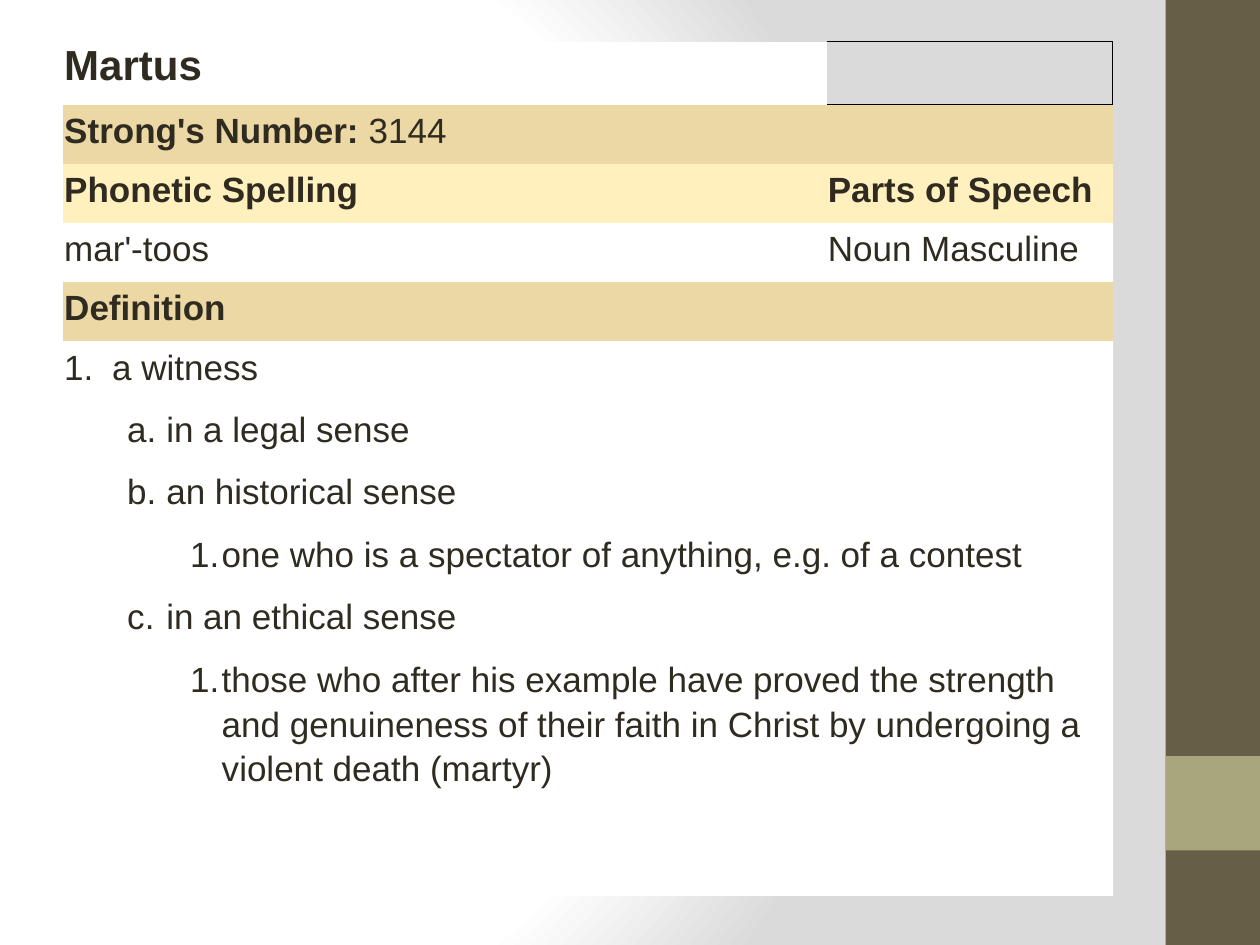
from dataclasses import dataclass

from pptx import Presentation
from pptx.dml.color import RGBColor
from pptx.enum.shapes import MSO_SHAPE
from pptx.oxml import parse_xml
from pptx.oxml.ns import nsdecls
from pptx.util import Inches, Pt

RECT = MSO_SHAPE.RECTANGLE
PLAIN_TABLE = "{2D5ABB26-0587-4C30-8999-92F81FD0307C}"


@dataclass(frozen=True)
class Theme:
    font: str = "Arial"
    title: int = 24
    body: int = 20
    ink: str = "2F2B20"
    white: str = "FFFFFF"
    grey: str = "DADADA"
    tan: str = "ECD8A5"
    cream: str = "FFF0BE"
    brown: str = "675E47"
    olive: str = "A9A57C"
    border: str = "000000"


THEME = Theme()

# List level: left indent, hanging indent, tab stop, numbering
LEVELS = [
    (0.38, 0.38, 0.5, "arabicPeriod"),
    (0.81, 0.31, 1.0, "alphaLcPeriod"),
    (1.25, 0.25, 1.5, "arabicPeriod"),
]

DEFINITION = [
    (0, "a witness"),
    (1, "in a legal sense"),
    (1, "an historical sense"),
    (2, "one who is a spectator of anything, e.g. of a contest"),
    (1, "in an ethical sense"),
    (2, "those who after his example have proved the strength and genuineness "
        "of their faith in Christ by undergoing a violent death (martyr)"),
]

# Row: fill, then one list of (text, bold) runs per cell
ROWS = [
    (THEME.tan, [("Strong's Number:", True), (" 3144", False)], []),
    (THEME.cream, [("Phonetic Spelling", True)], [("Parts of Speech", True)]),
    (THEME.white, [("mar'-toos ", False)], [("Noun Masculine", False)]),
    (THEME.tan, [("Definition", True)], []),
]


class SlideBuilder:
    def __init__(self, slide, theme):
        self.s = slide
        self.theme = theme

    def background(self):
        stops = [(0, self.theme.white), (75, self.theme.white), (100, self.theme.grey)]
        gs = "".join(f'<a:gs pos="{pos * 1000}"><a:srgbClr val="{color}"/></a:gs>'
                     for pos, color in stops)
        bg = parse_xml(
            f'<p:bg {nsdecls("p", "a")}><p:bgPr><a:gradFill rotWithShape="1">'
            f'<a:gsLst>{gs}</a:gsLst><a:path path="circle">'
            '<a:fillToRect l="20000" t="50000" r="100000" b="50000"/></a:path>'
            '</a:gradFill><a:effectLst/></p:bgPr></p:bg>')
        self.s._element.cSld.insert(0, bg)

    def band(self, left, top, width, height, color):
        sp = self.s.shapes.add_shape(
            RECT, Inches(left), Inches(top), Inches(width), Inches(height))
        sp.shadow.inherit = False
        sp.fill.solid()
        sp.fill.fore_color.rgb = RGBColor.from_string(color)
        sp.line.fill.background()

    def table(self, left, top, widths, heights):
        frame = self.s.shapes.add_table(
            len(heights), len(widths), Inches(left), Inches(top),
            Inches(sum(widths)), Inches(sum(heights)))
        table = frame.table
        table.first_row = table.horz_banding = False
        table._tbl.tblPr.find("{*}tableStyleId").text = PLAIN_TABLE
        for column, width in zip(table.columns, widths):
            column.width = Inches(width)
        for row, height in zip(table.rows, heights):
            row.height = Inches(height)
        for cell in table.iter_cells():
            for side in ("left", "right", "top", "bottom"):
                setattr(cell, f"margin_{side}", Inches(0.01))
        return table

    def fill(self, cell, color):
        cell.fill.solid()
        cell.fill.fore_color.rgb = RGBColor.from_string(color)

    def runs(self, p, runs, size=None, spacing=1.15):
        p.line_spacing = spacing
        for text, bold in runs:
            r = p.add_run()
            r.text = text
            r.font.color.rgb = RGBColor.from_string(self.theme.ink)
            style = {"name": self.theme.font, "size": Pt(size or self.theme.body),
                     "bold": bold}
            for name, value in style.items():
                setattr(r.font, name, value)

    def numbered_list(self, cell, items):
        tf = cell.text_frame
        for i, (level, text) in enumerate(items):
            p = tf.add_paragraph() if i else tf.paragraphs[0]
            self.runs(p, [(text, False)])
            p.level = level
            p.space_after = Pt(10)
            left, hanging, tab, numbering = LEVELS[level]
            pPr = p._p.get_or_add_pPr()
            pPr.set("marL", str(Inches(left)))
            pPr.set("indent", str(-Inches(hanging)))
            pPr.append(parse_xml(
                f'<a:buAutoNum {nsdecls("a")} type="{numbering}"/>'))
            pPr.append(parse_xml(
                f'<a:tabLst {nsdecls("a")}><a:tab pos="{Inches(tab)}" algn="l"/></a:tabLst>'))

    def borders(self, cell, sides):
        tcPr = cell._tc.get_or_add_tcPr()
        for i, side in enumerate(sides):
            tcPr.insert(i, parse_xml(
                f'<a:ln{side} {nsdecls("a")} w="{Pt(1)}"><a:solidFill>'
                f'<a:srgbClr val="{self.theme.border}"/></a:solidFill></a:ln{side}>'))


def main():
    prs = Presentation()
    prs.slide_width, prs.slide_height = Inches(10), Inches(7.5)
    s = prs.slides.add_slide(prs.slide_layouts[6])
    builder = SlideBuilder(s, THEME)

    # Backdrop and side bands
    builder.background()
    builder.band(9.25, 0, 0.75, 7.5, THEME.brown)
    builder.band(9.25, 6, 0.75, 0.75, THEME.olive)

    # Word entry: heading row
    table = builder.table(0.5, 0.33, [6.06, 2.27], [0.5] + [0.47] * len(ROWS) + [4.4])
    heading = table.cell(0, 0)
    builder.fill(heading, THEME.white)
    builder.runs(heading.text_frame.paragraphs[0], [("Martus", True)], THEME.title, 1.0)
    table.cell(0, 1).fill.background()
    builder.borders(table.cell(0, 1), "RTB")

    # Label and value rows
    for i, (color, *cells) in enumerate(ROWS, start=1):
        for j, runs in enumerate(cells):
            cell = table.cell(i, j)
            builder.fill(cell, color)
            builder.runs(cell.text_frame.paragraphs[0], runs)

    # Definition rows span both columns
    last = len(ROWS) + 1
    for i in (last - 1, last):
        table.cell(i, 0).merge(table.cell(i, 1))
    builder.fill(table.cell(last, 0), THEME.white)
    builder.numbered_list(table.cell(last, 0), DEFINITION)

    prs.save("out.pptx")


if __name__ == "__main__":
    main()
